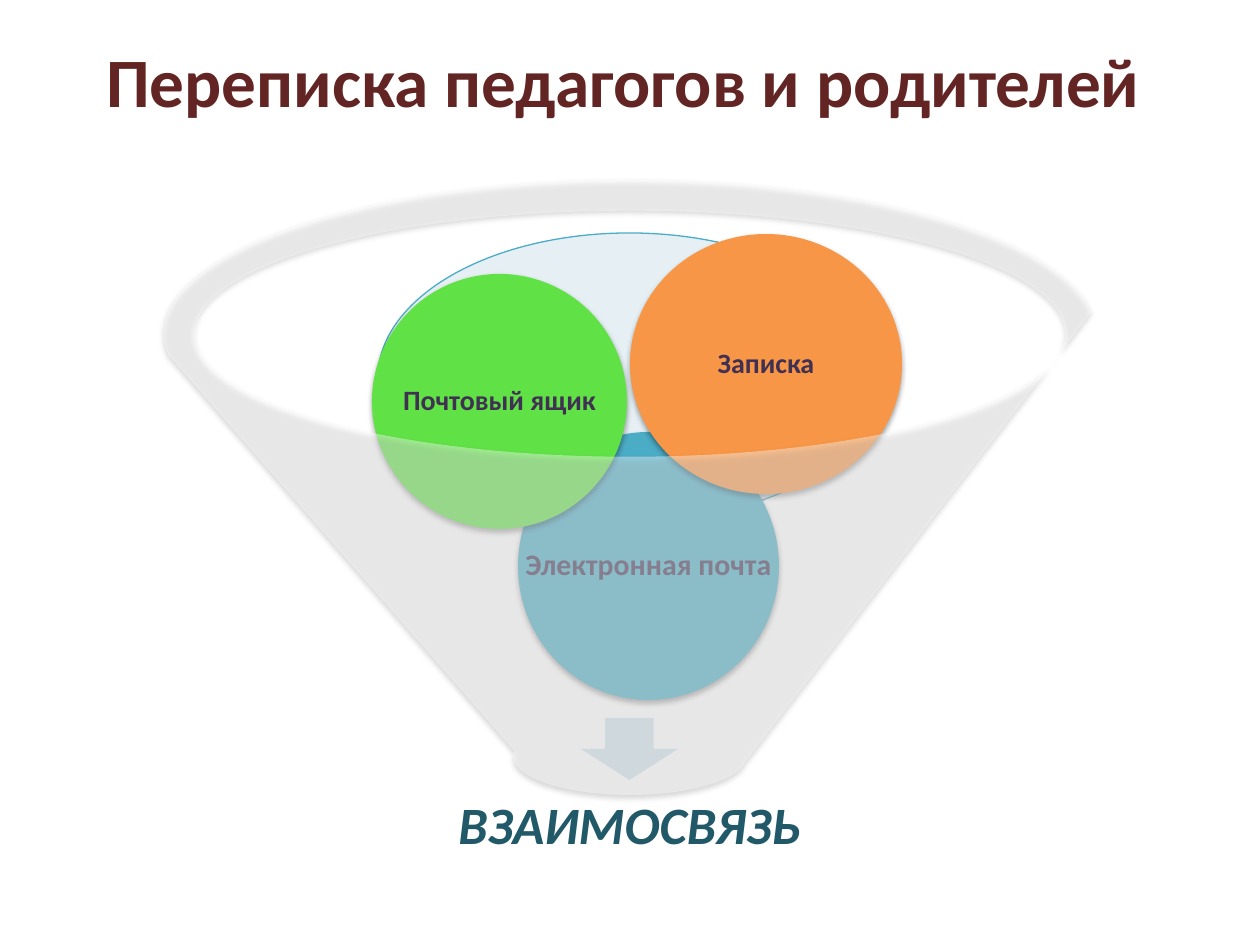
from lxml.etree import SubElement
from pptx import Presentation
from pptx.dml.color import RGBColor
from pptx.enum.shapes import MSO_SHAPE
from pptx.enum.text import MSO_ANCHOR, PP_ALIGN
from pptx.oxml.ns import qn
from pptx.util import Emu, Pt

TITLE = "Переписка педагогов и родителей "
RESULT = "ВЗАИМОСВЯЗЬ"
CHANNELS = [
    ("Электронная почта", (518, 432, 261, 268), "4BACC6", 17),
    ("Почтовый ящик", (372, 274, 255, 255), "60E146", 16),
    ("Записка", (630, 234, 272, 260), "F79646", 16),
]
SCALE = 914400 / 126


def px(value):
    return Emu(round(value * SCALE))


def color(value):
    return RGBColor.from_string(value)


def add_alpha(color_element, percent):
    SubElement(color_element, qn("a:alpha"), val=str(percent * 1000))


def add_figure(slide, kind, box, fill, alpha=None):
    shape = slide.shapes.add_shape(kind, *map(px, box))
    shape.shadow.inherit = False
    shape.fill.solid()
    shape.fill.fore_color.rgb = color(fill)
    shape.line.fill.background()
    if alpha:
        add_alpha(shape.fill._xPr.find(".//" + qn("a:srgbClr")), alpha)
    return shape


def add_shadow(shape, alpha, distance):
    effects = shape._element.spPr.find(qn("a:effectLst"))
    shadow = SubElement(effects, qn("a:outerShdw"), blurRad=str(Pt(3.1)),
                        dist=str(Pt(distance)), dir="5400000", rotWithShape="0")
    add_alpha(SubElement(shadow, qn("a:srgbClr"), val="000000"), alpha)


def write(shape, text, size, text_color, italic=False, wrap=True, inset=2, spacing=0.9):
    frame = shape.text_frame
    frame.word_wrap = wrap
    frame.vertical_anchor = MSO_ANCHOR.MIDDLE
    frame.margin_left = frame.margin_right = px(inset)
    frame.margin_top = frame.margin_bottom = px(inset)
    paragraph = frame.paragraphs[0]
    paragraph.text = text
    paragraph.alignment = PP_ALIGN.CENTER
    paragraph.line_spacing = spacing
    font = paragraph.runs[0].font
    font.name = "Calibri"
    font.size = Pt(size)
    font.bold = True
    font.italic = italic
    font.color.rgb = color(text_color)


def main():
    presentation = Presentation()
    presentation.slide_width, presentation.slide_height = px(1260), px(945)
    slide = presentation.slides.add_slide(presentation.slide_layouts[6])

    title = slide.shapes.add_textbox(*map(px, (64, 26, 1134, 107)))
    write(title, TITLE, 39.6, "632523", inset=6, spacing=1.0)

    opening = add_figure(slide, MSO_SHAPE.OVAL, (378, 233, 503, 289), "C1DBE5", 40)
    opening.line.color.rgb = color("4BACC6")
    opening.line.width = Pt(0.75)
    add_figure(slide, MSO_SHAPE.DOWN_ARROW, (581, 718, 97, 62), "D0E3EA")

    result = slide.shapes.add_textbox(*map(px, (396, 769, 467, 117)))
    write(result, RESULT, 30, "215968", italic=True, inset=29)

    for name, box, fill, size in CHANNELS:
        circle = add_figure(slide, MSO_SHAPE.OVAL, box, fill)
        add_shadow(circle, 35, 1.8)
        write(circle, name, size, "403152", wrap=False)

    funnel = add_figure(slide, MSO_SHAPE.FUNNEL, (164, 180, 932, 615), "FFFFFF", 40)
    add_shadow(funnel, 38, 1.6)

    presentation.save("out.pptx")


if __name__ == "__main__":
    main()
